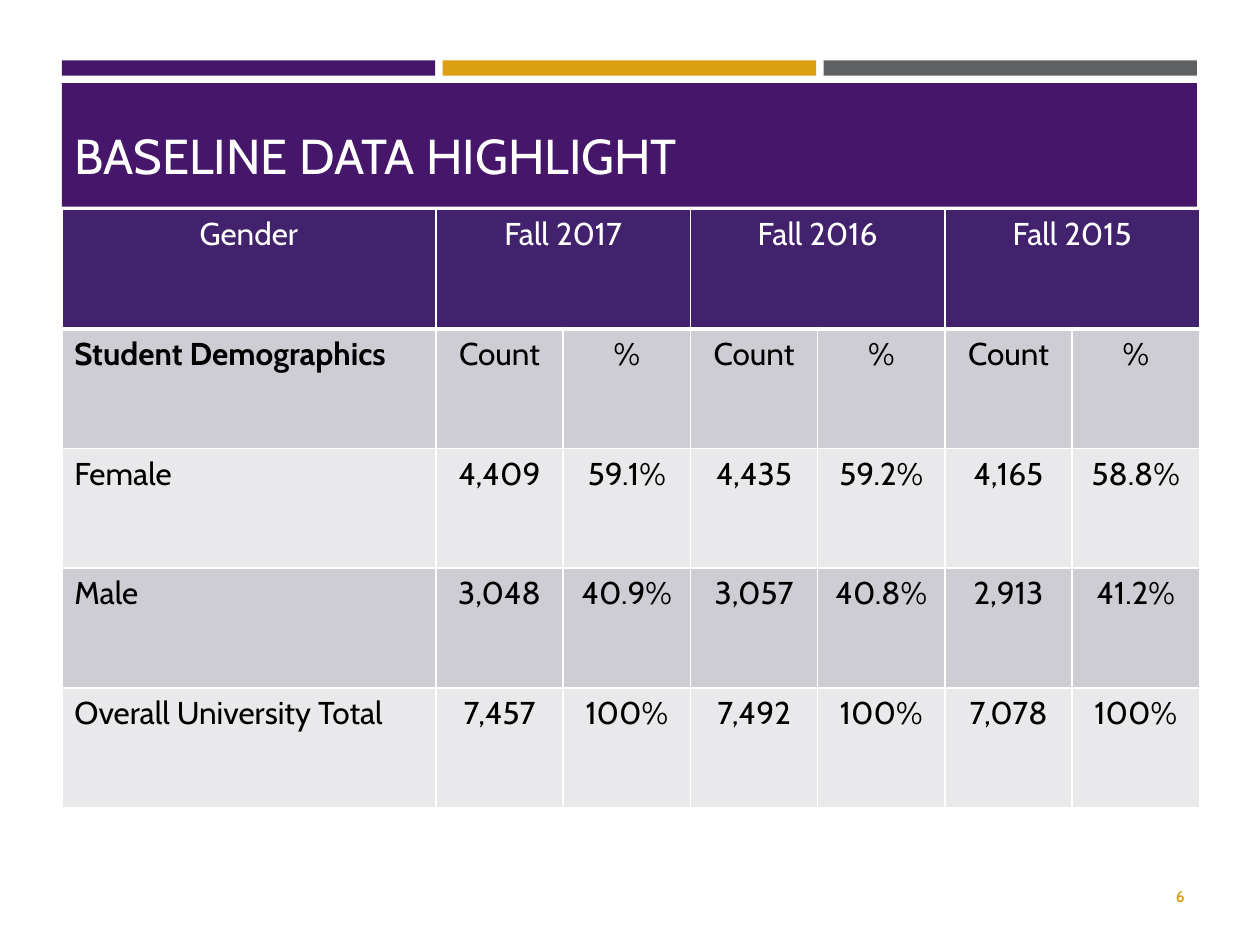
from pptx import Presentation
from pptx.dml.color import RGBColor
from pptx.enum.shapes import MSO_SHAPE
from pptx.enum.text import MSO_ANCHOR, MSO_AUTO_SIZE, PP_ALIGN
from pptx.oxml import parse_xml
from pptx.oxml.ns import nsdecls
from pptx.util import Inches, Pt

FONT = "Cabin"
PURPLE, GOLD, GRAY, WHITE, BLACK = "46166B", "DB9F11", "5F6062", "FFFFFF", "000000"
HEADER_FILL, ROW_FILLS = "42226C", ("CFCDD4", "E9E8EB")
LEFT, WIDTH, GAP = 0.49, 9.01, 0.06
LABEL_WIDTH, VALUE_WIDTH, ROW_HEIGHT = 2.97, 1.01, 0.95
HEADERS = ["Gender", "Fall 2017", "", "Fall 2016", "", "Fall 2015", ""]
ROWS = [
    ["Student Demographics"] + ["Count", "%"] * 3,
    ["Female", "4,409", "59.1%", "4,435", "59.2%", "4,165", "58.8%"],
    ["Male", "3,048", "40.9%", "3,057", "40.8%", "2,913", "41.2%"],
    ["Overall University Total", "7,457", "100%", "7,492", "100%", "7,078", "100%"],
]


def rgb(value):
    """Return the colour for a hex string."""
    return RGBColor.from_string(value)


def write_text(text_frame, text, size, color, align=PP_ALIGN.LEFT, bold=False):
    """Fill a text frame with one formatted paragraph."""
    text_frame.text = text
    paragraph = text_frame.paragraphs[0]
    paragraph.alignment = align
    for run in paragraph.runs:
        run.font.name = FONT
        run.font.size = Pt(size)
        run.font.bold = bold
        run.font.color.rgb = rgb(color)


def add_bar(slide, left, top, width, height, color):
    """Add a plain filled rectangle."""
    shape = slide.shapes.add_shape(
        MSO_SHAPE.RECTANGLE, Inches(left), Inches(top), Inches(width), Inches(height))
    shape.shadow.inherit = False
    shape.fill.solid()
    shape.fill.fore_color.rgb = rgb(color)
    shape.line.fill.background()


def add_banner(slide):
    """Add the three accent bars and the title band."""
    bar_width = (WIDTH - 2 * GAP) / 3
    for index, color in enumerate((PURPLE, GOLD, GRAY)):
        add_bar(slide, LEFT + index * (bar_width + GAP), 0.48, bar_width, 0.12, color)
    add_bar(slide, LEFT, 0.66, WIDTH, 0.98, PURPLE)


def place_title(slide, text):
    """Format the title placeholder and bring it in front of the band."""
    title = slide.shapes.title
    title.left, title.top = Inches(LEFT), Inches(0.75)
    title.width, title.height = Inches(WIDTH), Inches(0.76)
    write_text(title.text_frame, text, 28, WHITE)
    title.text_frame.auto_size = MSO_AUTO_SIZE.NONE
    title.text_frame.vertical_anchor = MSO_ANCHOR.BOTTOM
    slide.shapes.element.append(title.element)


def add_page_number(slide, text):
    """Add the page number at the lower right."""
    box = slide.shapes.add_textbox(Inches(8.53), Inches(6.91), Inches(0.97), Inches(0.4))
    box.text_frame.word_wrap = True
    box.text_frame.vertical_anchor = MSO_ANCHOR.MIDDLE
    write_text(box.text_frame, text, 9, "DA9F11", PP_ALIGN.RIGHT, True)


def style_cell(cell, fill, bottom_width):
    """Give a cell white borders and a solid fill."""
    properties = cell._tc.get_or_add_tcPr()
    for side, width in (("L", 1), ("R", 1), ("T", 1), ("B", bottom_width)):
        properties.append(parse_xml(
            f'<a:ln{side} {nsdecls("a")} w="{Pt(width)}"><a:solidFill>'
            f'<a:srgbClr val="{WHITE}"/></a:solidFill></a:ln{side}>'))
    cell.fill.solid()
    cell.fill.fore_color.rgb = rgb(fill)


def add_data_table(slide):
    """Add the enrolment table with merged term headings."""
    contents = [HEADERS] + ROWS
    table = slide.shapes.add_table(
        len(contents), len(HEADERS), Inches(LEFT), Inches(1.66),
        Inches(WIDTH), Inches(ROW_HEIGHT * len(contents))).table
    for index, column in enumerate(table.columns):
        column.width = Inches(VALUE_WIDTH if index else LABEL_WIDTH)
    for row_index, texts in enumerate(contents):
        table.rows[row_index].height = Inches(ROW_HEIGHT)
        header = row_index == 0
        fill = HEADER_FILL if header else ROW_FILLS[(row_index - 1) % 2]
        for column_index, text in enumerate(texts):
            cell = table.cell(row_index, column_index)
            style_cell(cell, fill, 3 if header else 1)
            align = PP_ALIGN.CENTER if header or column_index else PP_ALIGN.LEFT
            bold = row_index == 1 and column_index == 0
            write_text(cell.text_frame, text, 18, WHITE if header else BLACK, align, bold)
    for column_index in range(1, len(HEADERS), 2):
        table.cell(0, column_index).merge(table.cell(0, column_index + 1))


def main():
    """Build and save the slide."""
    presentation = Presentation()
    presentation.slide_width, presentation.slide_height = Inches(10), Inches(7.5)
    slide = presentation.slides.add_slide(presentation.slide_layouts[5])
    add_banner(slide)
    place_title(slide, "BASELINE DATA HIGHLIGHT")
    add_page_number(slide, "6")
    add_data_table(slide)
    presentation.save("out.pptx")


if __name__ == "__main__":
    main()
